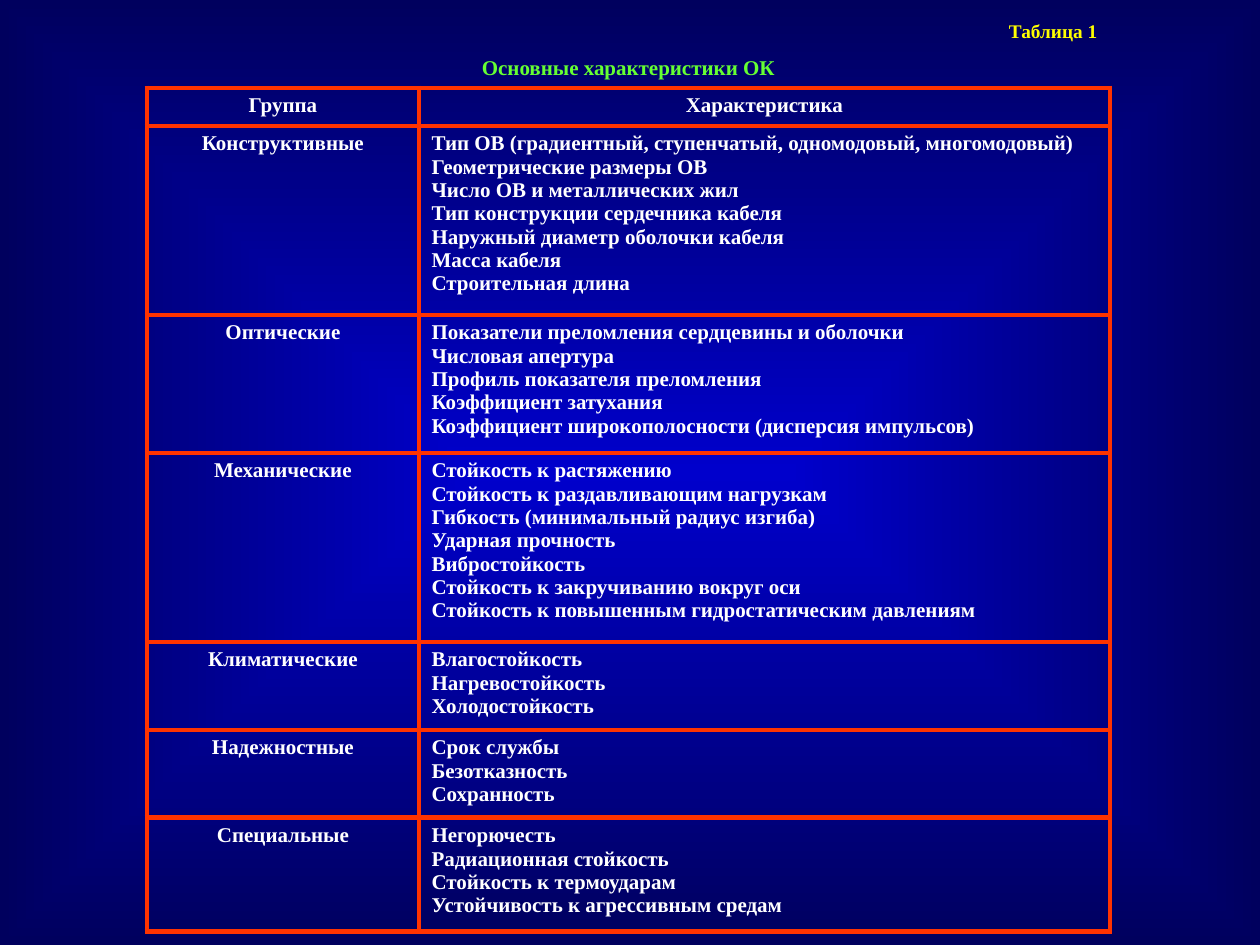
from dataclasses import dataclass

import lxml.etree
import pptx
import pptx.dml.color
import pptx.enum.text
import pptx.oxml
import pptx.oxml.ns
import pptx.util

RGBColor = pptx.dml.color.RGBColor
Align = pptx.enum.text.PP_ALIGN
Anchor = pptx.enum.text.MSO_ANCHOR
qn = pptx.oxml.ns.qn

EMU_PER_PX = 914400 / 126
FONT = "Times New Roman"
BRIGHT_BLUE = RGBColor(0x00, 0x00, 0xCC)
DARK_BLUE = RGBColor(0x00, 0x00, 0x5E)
ORANGE = RGBColor(0xFF, 0x33, 0x00)
YELLOW = RGBColor(0xFF, 0xFF, 0x00)
GREEN = RGBColor(0x66, 0xFF, 0x33)
WHITE = RGBColor(0xFF, 0xFF, 0xFF)
BORDER_POINTS = 3
NO_STYLE = "{2D5ABB26-0587-4C30-8999-92F81FD0307C}"

TABLE_LEFT, TABLE_TOP = 147, 15
COLUMN_WIDTHS = (272, 691)


@dataclass(frozen=True)
class Heading:
    text: str
    height: int
    size: int
    color: RGBColor
    align: Align
    anchor: Anchor
    borders: str


@dataclass(frozen=True)
class Group:
    name: str
    height: int
    features: tuple[str, ...]
    align: Align = Align.LEFT


HEADINGS = (
    Heading("Таблица 1", 35, 11, YELLOW, Align.RIGHT, Anchor.TOP, ""),
    Heading("Основные характеристики ОК", 38, 12, GREEN, Align.CENTER, Anchor.MIDDLE, "B"),
)
GROUPS = (
    Group("Группа", 38, ("Характеристика",), Align.CENTER),
    Group("Конструктивные", 189, (
        "Тип ОВ (градиентный, ступенчатый, одномодовый, многомодовый)",
        "Геометрические размеры ОВ",
        "Число ОВ и металлических жил",
        "Тип конструкции сердечника кабеля",
        "Наружный диаметр оболочки кабеля",
        "Масса кабеля",
        "Строительная длина",
    )),
    Group("Оптические", 138, (
        "Показатели преломления сердцевины и оболочки",
        "Числовая апертура",
        "Профиль показателя преломления",
        "Коэффициент затухания",
        "Коэффициент широкополосности (дисперсия импульсов)",
    )),
    Group("Механические", 189, (
        "Стойкость к растяжению",
        "Стойкость к раздавливающим нагрузкам",
        "Гибкость (минимальный радиус изгиба)",
        "Ударная прочность",
        "Вибростойкость",
        "Стойкость к закручиванию вокруг оси",
        "Стойкость к повышенным гидростатическим давлениям",
    )),
    Group("Климатические", 88, ("Влагостойкость", "Нагревостойкость", "Холодостойкость")),
    Group("Надежностные", 88, ("Срок службы", "Безотказность", "Сохранность")),
    Group("Специальные", 114, (
        "Негорючесть",
        "Радиационная стойкость",
        "Стойкость к термоударам",
        "Устойчивость к агрессивным средам",
    )),
)


def px(length: int) -> pptx.util.Emu:
    return pptx.util.Emu(round(length * EMU_PER_PX))


def paint_background(slide) -> None:
    """Fill the slide with a gradient that spreads from its centre."""
    fill = slide.background.fill
    fill.gradient()
    for stop, color in zip(fill.gradient_stops, (BRIGHT_BLUE, DARK_BLUE)):
        stop.color.rgb = color
    gradient = slide.background._cSld.find(".//" + qn("a:gradFill"))
    path = lxml.etree.Element(qn("a:path"), path="shape")
    lxml.etree.SubElement(path, qn("a:fillToRect"), l="50000", t="50000", r="50000", b="50000")
    gradient.replace(gradient.find(qn("a:lin")), path)


def set_borders(cell, sides: str) -> None:
    """Draw the named sides, given in the order L, R, T, B."""
    properties = cell._tc.get_or_add_tcPr()
    for position, side in enumerate(sides):
        line = pptx.oxml.parse_xml(
            f'<a:ln{side} {pptx.oxml.ns.nsdecls("a")} w="{pptx.util.Pt(BORDER_POINTS)}">'
            f'<a:solidFill><a:srgbClr val="{ORANGE}"/></a:solidFill></a:ln{side}>'
        )
        properties.insert(position, line)


def fill_cell(cell, lines: tuple[str, ...], align: Align, size: int = 12,
              color: RGBColor = WHITE, anchor: Anchor = Anchor.TOP,
              borders: str = "LRTB") -> None:
    cell.fill.background()
    cell.vertical_anchor = anchor
    set_borders(cell, borders)
    frame = cell.text_frame
    for index, line in enumerate(lines):
        paragraph = frame.add_paragraph() if index else frame.paragraphs[0]
        paragraph.alignment = align
        run = paragraph.add_run()
        run.text = line
        run.font.name = FONT
        run.font.size = pptx.util.Pt(size)
        run.font.bold = True
        run.font.color.rgb = color


def add_characteristics_table(slide) -> None:
    rows = HEADINGS + GROUPS
    table = slide.shapes.add_table(
        len(rows), len(COLUMN_WIDTHS), px(TABLE_LEFT), px(TABLE_TOP),
        px(sum(COLUMN_WIDTHS)), px(sum(row.height for row in rows)),
    ).table
    table.first_row = table.horz_banding = False
    table._tbl.tblPr.find(qn("a:tableStyleId")).text = NO_STYLE
    for column, width in zip(table.columns, COLUMN_WIDTHS):
        column.width = px(width)
    for table_row, row in zip(table.rows, rows):
        table_row.height = px(row.height)

    for index, heading in enumerate(HEADINGS):
        first, last = table.rows[index].cells
        first.merge(last)
        fill_cell(first, (heading.text,), heading.align, heading.size,
                  heading.color, heading.anchor, heading.borders)
        last.fill.background()
        set_borders(last, heading.borders)
    for index, group in enumerate(GROUPS, start=len(HEADINGS)):
        name_cell, features_cell = table.rows[index].cells
        fill_cell(name_cell, (group.name,), Align.CENTER)
        fill_cell(features_cell, group.features, group.align)


def main() -> None:
    presentation = pptx.Presentation()
    presentation.slide_width = px(1260)
    presentation.slide_height = px(945)
    slide = presentation.slides.add_slide(presentation.slide_layouts[6])
    paint_background(slide)
    add_characteristics_table(slide)
    presentation.save("out.pptx")


if __name__ == "__main__":
    main()
